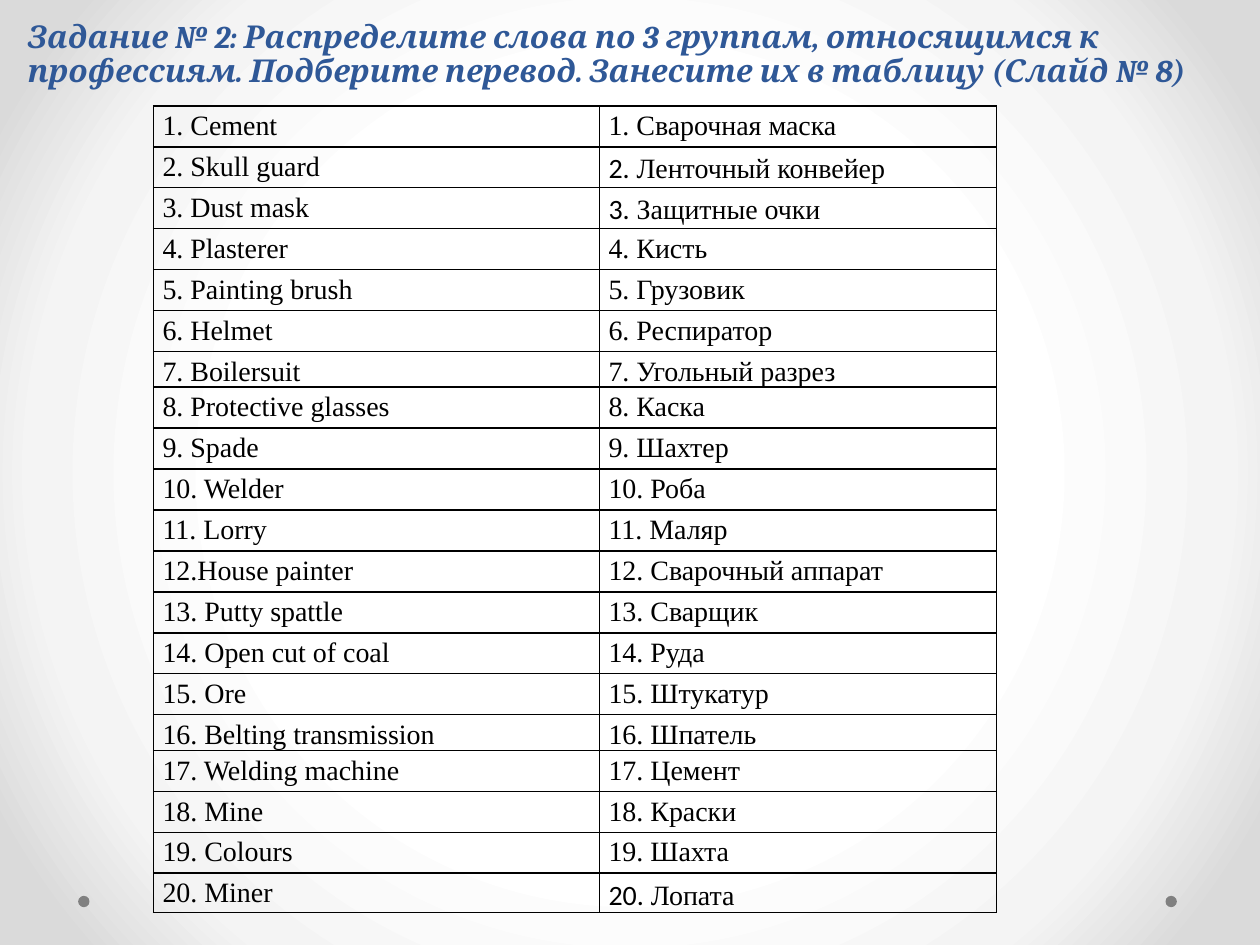
from dataclasses import dataclass

from lxml.etree import SubElement
from pptx import Presentation
from pptx.dml.color import RGBColor
from pptx.enum.shapes import MSO_SHAPE
from pptx.enum.text import MSO_ANCHOR, MSO_AUTO_SIZE, PP_ALIGN
from pptx.oxml import parse_xml
from pptx.oxml.ns import nsdecls, qn
from pptx.util import Inches, Pt


@dataclass(frozen=True)
class Theme:
    title_color: str = "2F5897"
    text_color: str = "000000"
    border_color: str = "000000"
    dot_color: str = "808080"
    backdrop: tuple = ((50, "FFFFFF"), (76, "F4F4F4"), (92, "DADADA"))
    title_font: str = "Cambria"
    table_font: str = "Times New Roman"
    number_font: str = "Calibri"
    title_size: int = 18
    table_size: int = 16
    border_width: int = 1


class SlideBuilder:
    def __init__(self, slide, theme):
        self.s = slide
        self.theme = theme

    def background(self):
        """Radial gradient from the middle of the slide."""
        stops = "".join(
            f'<a:gs pos="{pos * 1000}"><a:srgbClr val="{color}"/></a:gs>'
            for pos, color in self.theme.backdrop)
        bg = parse_xml(
            f'<p:bg {nsdecls("p", "a")}><p:bgPr><a:gradFill rotWithShape="1">'
            f'<a:gsLst>{stops}</a:gsLst><a:path path="circle">'
            '<a:fillToRect l="50000" t="50000" r="50000" b="50000"/></a:path>'
            '</a:gradFill><a:effectLst/></p:bgPr></p:bg>')
        self.s.element.cSld.insert(0, bg)

    def dot(self, left, top, size):
        sp = self.s.shapes.add_shape(MSO_SHAPE.OVAL, Inches(left), Inches(top),
                                     Inches(size), Inches(size))
        sp.shadow.inherit = False
        sp.fill.solid()
        sp.fill.fore_color.rgb = RGBColor.from_string(self.theme.dot_color)
        sp.line.fill.background()

    def run(self, p, text, font, size, color):
        r = p.add_run()
        r.text = text
        r.font.name = font
        r.font.size = Pt(size)
        r.font.color.rgb = RGBColor.from_string(color)
        return r

    def title(self, text, left, top, width, height):
        t = self.theme
        sp = self.s.shapes.title
        sp.left, sp.top = Inches(left), Inches(top)
        sp.width, sp.height = Inches(width), Inches(height)
        tf = sp.text_frame
        tf.word_wrap = True
        tf.auto_size = MSO_AUTO_SIZE.NONE
        tf.vertical_anchor = MSO_ANCHOR.BOTTOM
        p = tf.paragraphs[0]
        p.alignment = PP_ALIGN.LEFT
        p.line_spacing = 0.9
        r = self.run(p, text, t.title_font, t.title_size, t.title_color)
        r.font.bold = r.font.italic = True

    def borders(self, cell):
        tcPr = cell._tc.get_or_add_tcPr()
        for side in ("lnL", "lnR", "lnT", "lnB"):
            ln = SubElement(tcPr, qn(f"a:{side}"),
                            w=str(Pt(self.theme.border_width)))
            fill = SubElement(ln, qn("a:solidFill"))
            SubElement(fill, qn("a:srgbClr"), val=self.theme.border_color)

    def cell(self, cell, text, number_apart):
        t = self.theme
        self.borders(cell)
        cell.fill.background()
        cell.margin_left = cell.margin_right = Inches(0.07)
        cell.margin_top = cell.margin_bottom = 0
        p = cell.text_frame.paragraphs[0]
        p.line_spacing = 1.15
        if number_apart:
            number, dot, text = text.partition(".")
            self.run(p, number + dot, t.number_font, t.table_size, t.text_color)
        self.run(p, text, t.table_font, t.table_size, t.text_color)

    def table(self, rows, left, top, widths, heights, numbers_apart):
        frame = self.s.shapes.add_table(
            len(rows), len(widths), Inches(left), Inches(top),
            Inches(sum(widths)), Inches(sum(heights)))
        tbl = frame.table
        tbl.first_row = tbl.horz_banding = False
        for col, width in zip(tbl.columns, widths):
            col.width = Inches(width)
        for i, (row, height) in enumerate(zip(rows, heights)):
            tbl.rows[i].height = Inches(height)
            for j, text in enumerate(row):
                self.cell(tbl.cell(i, j), text, (i, j) in numbers_apart)


TITLE = ("Задание № 2: Распределите слова по 3 группам, относящимся к "
         "профессиям. Подберите перевод. Занесите их в таблицу (Слайд № 8)")

WORDS = [
    ("1. Cement", "1. Сварочная маска"),
    ("2. Skull guard", "2. Ленточный конвейер"),
    ("3. Dust mask", "3. Защитные очки"),
    ("4. Plasterer", "4. Кисть"),
    ("5. Painting brush", "5. Грузовик"),
    ("6. Helmet", "6. Респиратор"),
    ("7. Boilersuit", "7. Угольный разрез"),
    ("8. Protective glasses", "8. Каска"),
    ("9. Spade", "9. Шахтер"),
    ("10. Welder", "10. Роба"),
    ("11. Lorry", "11. Маляр"),
    ("12.House painter", "12. Сварочный аппарат"),
    ("13. Putty spattle", "13. Сварщик"),
    ("14. Оpen cut of coal", "14. Руда"),
    ("15. Ore", "15. Штукатур"),
    ("16. Belting transmission", "16. Шпатель"),
    ("17. Welding machine", "17. Цемент"),
    ("18. Mine", "18. Краски"),
    ("19. Colours", "19. Шахта"),
    ("20. Miner", "20. Лопата"),
]


def main():
    prs = Presentation()
    prs.slide_width, prs.slide_height = Inches(10), Inches(7.5)
    slide = SlideBuilder(prs.slides.add_slide(prs.slide_layouts[5]), Theme())

    # Backdrop with two corner dots
    slide.background()
    for left in (9.25, 0.62):
        slide.dot(left, 7.11, 0.09)

    # Task heading
    slide.title(TITLE, 0.12, 0.13, 9.45, 0.63)

    # Word list: even rows, apart from three lower ones
    low_rows = {6: 0.28, 15: 0.28, 19: 0.31}
    heights = [low_rows.get(i, 0.325) for i in range(len(WORDS))]
    slide.table(WORDS, 1.22, 0.84, (3.54, 3.15), heights,
                numbers_apart={(1, 1), (2, 1), (19, 1)})

    prs.save("out.pptx")


if __name__ == "__main__":
    main()
